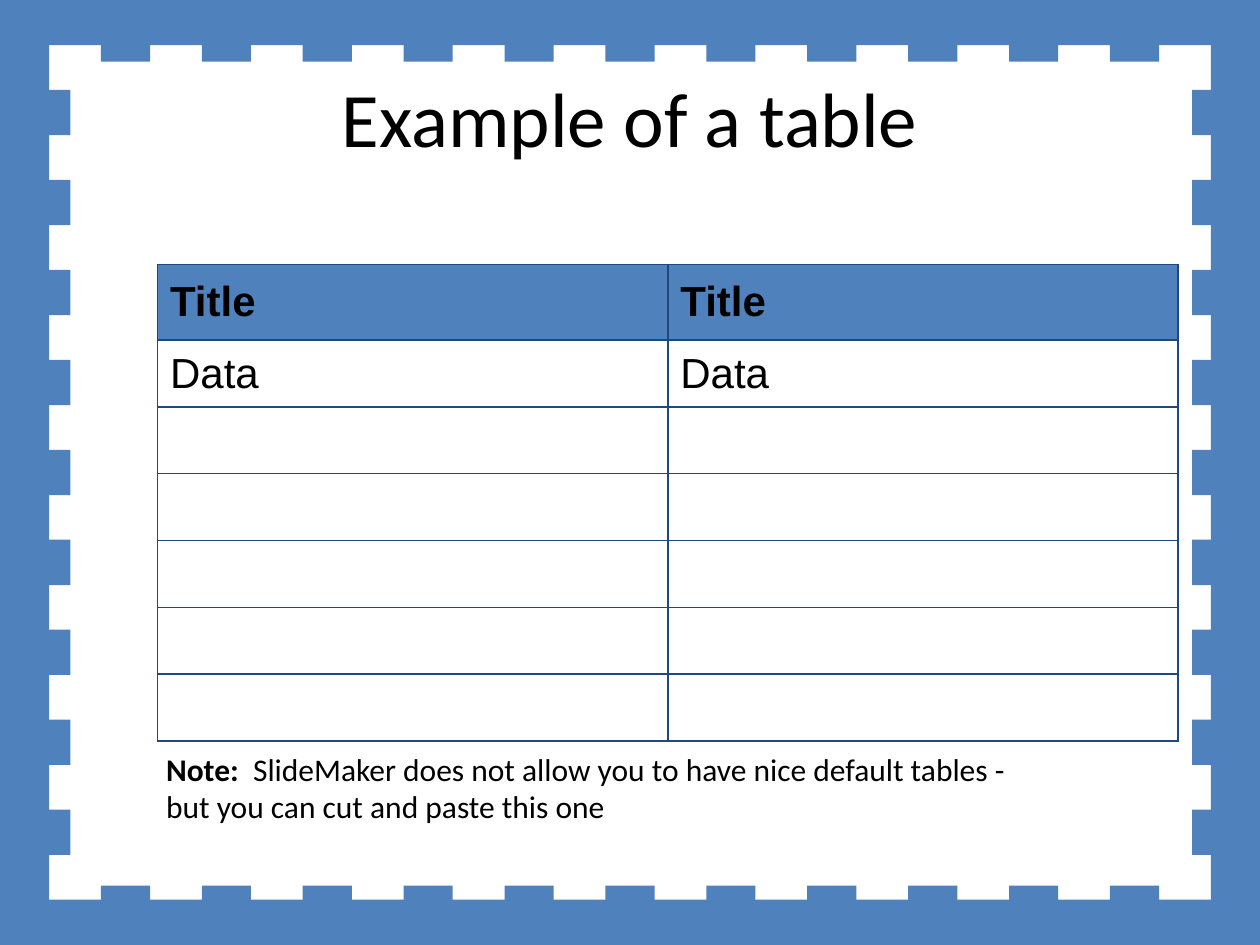
from pptx import Presentation
from pptx.dml.color import RGBColor
from pptx.enum.shapes import MSO_SHAPE
from pptx.enum.text import MSO_ANCHOR, PP_ALIGN
from pptx.oxml import parse_xml
from pptx.oxml.ns import nsdecls
from pptx.util import Inches, Pt

BLUE = RGBColor(0x4F, 0x81, 0xBD)
NAVY = RGBColor(0x1F, 0x49, 0x7D)
WHITE = RGBColor(0xFF, 0xFF, 0xFF)
BLACK = RGBColor(0, 0, 0)
WIDTH, HEIGHT = 10, 7.5
ROWS, COLS = 11, 13
BAR_HIGH, BAR_WIDE = 0.36, 0.39


def add_bar(slide, box, color):
    bar = slide.shapes.add_shape(MSO_SHAPE.RECTANGLE, *map(Inches, box))
    bar.shadow.inherit = False
    bar.fill.solid()
    bar.fill.fore_color.rgb = color
    bar.line.fill.background()


def add_frame(slide):
    down = (HEIGHT - BAR_HIGH) / (ROWS - 1)
    across = (WIDTH - BAR_WIDE) / (COLS - 1)
    for row in range(ROWS):
        add_bar(slide, (0, row * down, WIDTH, BAR_HIGH), BLUE)
    for col in range(COLS):
        add_bar(slide, (col * across, 0, BAR_WIDE, HEIGHT), BLUE)
    add_bar(slide, (0.56, 0.49, 8.9, 6.54), WHITE)


def add_run(para, text, **style):
    run = para.add_run()
    run.text = text
    run.font.color.rgb = BLACK
    for name, value in style.items():
        setattr(run.font, name, Pt(value) if name == "size" else value)


def add_text(slide, box, anchor, align, runs):
    frame = slide.shapes.add_textbox(*map(Inches, box)).text_frame
    frame.word_wrap = True
    frame.vertical_anchor = anchor
    para = frame.paragraphs[0]
    para.alignment = align
    for text, style in runs:
        add_run(para, text, name="Calibri", **style)


def add_border(cell):
    props = cell._tc.get_or_add_tcPr()
    for side in ("lnL", "lnR", "lnT", "lnB"):
        props.append(parse_xml(
            f'<a:{side} {nsdecls("a")} w="{Pt(1)}"><a:solidFill>'
            f'<a:srgbClr val="{NAVY}"/></a:solidFill></a:{side}>'))


def add_grid(slide, box, heights, texts):
    table = slide.shapes.add_table(len(heights), 2, *map(Inches, box)).table
    table.first_row = table.horz_banding = False
    for row, high in enumerate(heights):
        table.rows[row].height = Inches(high)
        for cell in table.rows[row].cells:
            add_border(cell)
            cell.vertical_anchor = MSO_ANCHOR.MIDDLE
            if row == 0:
                cell.fill.solid()
                cell.fill.fore_color.rgb = BLUE
            else:
                cell.fill.background()
            if row < len(texts):
                add_run(cell.text_frame.paragraphs[0], texts[row],
                        name="Arial", size=24, bold=row == 0)


def main():
    deck = Presentation()
    deck.slide_width, deck.slide_height = Inches(WIDTH), Inches(HEIGHT)
    slide = deck.slides.add_slide(deck.slide_layouts[6])
    add_frame(slide)
    add_text(slide, (0.5, 0.3, 9, 1.25), MSO_ANCHOR.MIDDLE, PP_ALIGN.CENTER,
             [("Example of a table", {"size": 44})])
    add_grid(slide, (1.25, 2.1, 8.1, 3.76), [0.6] + [0.53] * 6,
             ["Title", "Data"])
    add_text(slide, (1.22, 5.9, 6.93, 0.71), MSO_ANCHOR.TOP, PP_ALIGN.LEFT, [
        ("Note:  ", {"size": 18, "bold": True}),
        ("SlideMaker does not allow you to have nice default tables - "
         "but you can cut and paste this one", {"size": 18})])
    deck.save("out.pptx")


if __name__ == "__main__":
    main()
